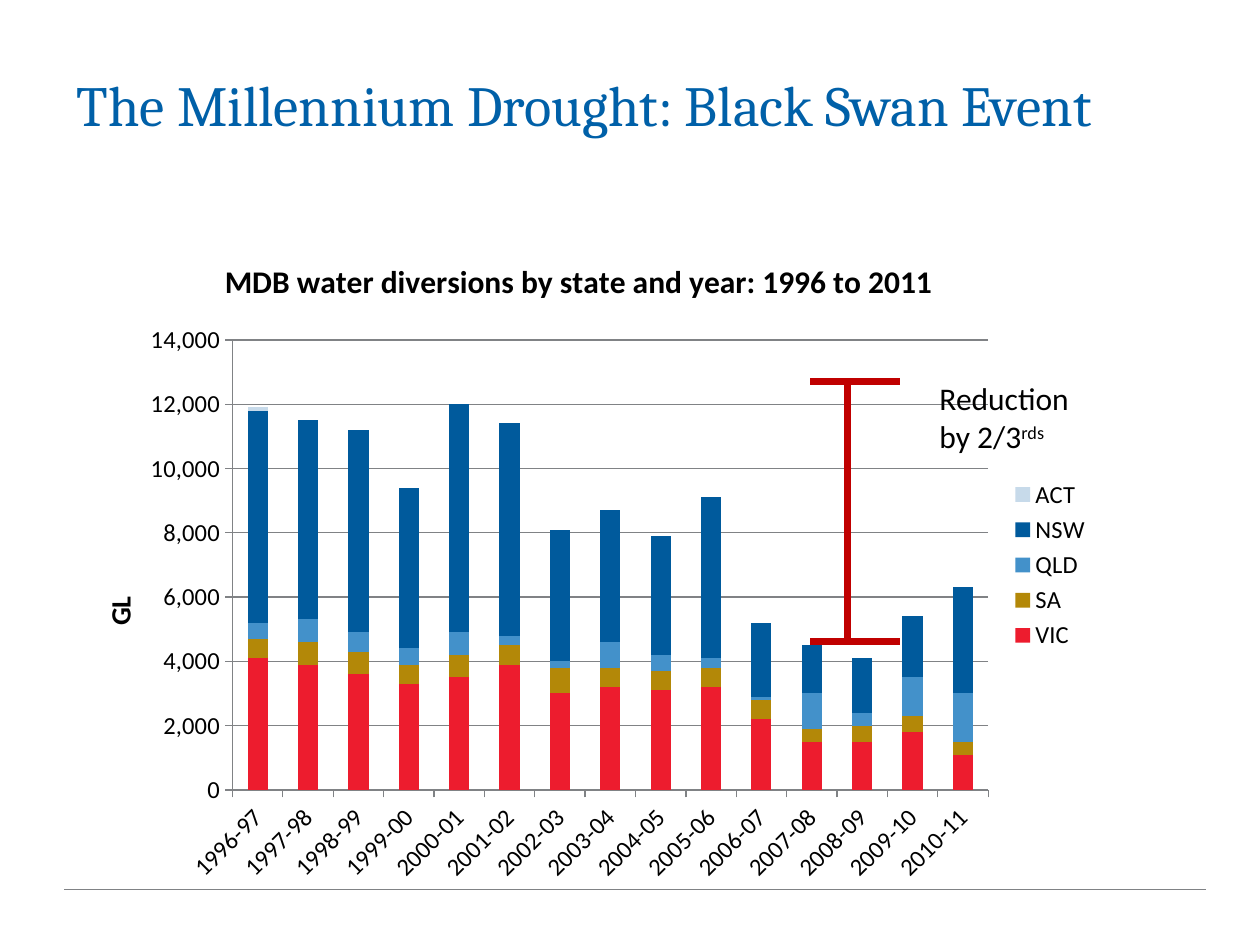
from lxml.etree import SubElement
from pptx import Presentation
from pptx.chart.data import CategoryChartData
from pptx.dml.color import RGBColor
from pptx.enum.chart import XL_CHART_TYPE, XL_LEGEND_POSITION, XL_TICK_MARK
from pptx.enum.shapes import MSO_CONNECTOR
from pptx.enum.text import MSO_ANCHOR, MSO_AUTO_SIZE
from pptx.oxml import parse_xml
from pptx.oxml.ns import nsdecls, qn
from pptx.util import Cm, Pt

BLACK = RGBColor(0x00, 0x00, 0x00)
BLUE = RGBColor(0x00, 0x60, 0xA8)
RED = RGBColor(0xC0, 0x00, 0x00)
GREY = RGBColor(0x80, 0x82, 0x85)
STATES = [
    ("VIC", RGBColor(0xED, 0x1C, 0x2E),
     [4100, 3900, 3600, 3300, 3500, 3900, 3000, 3200, 3100, 3200, 2200, 1500, 1500, 1800, 1100]),
    ("SA", RGBColor(0xB3, 0x88, 0x08),
     [600, 700, 700, 600, 700, 600, 800, 600, 600, 600, 600, 400, 500, 500, 400]),
    ("QLD", RGBColor(0x43, 0x91, 0xCA),
     [500, 700, 600, 500, 700, 300, 200, 800, 500, 300, 100, 1100, 400, 1200, 1500]),
    ("NSW", RGBColor(0x00, 0x5A, 0x9C),
     [6600, 6200, 6300, 5000, 7100, 6600, 4100, 4100, 3700, 5000, 2300, 1500, 1700, 1900, 3300]),
    ("ACT", RGBColor(0xC7, 0xDA, 0xEA), [100] + [0] * 14),
]


def add_run(para, text, size, color=BLACK, face="Calibri", bold=False):
    run = para.add_run()
    run.text = text
    font = run.font
    font.size, font.name, font.bold = Pt(size), face, bold
    font.color.rgb = color
    return run


def set_place(node, index, **parts):
    for old in node.findall(qn("c:layout")):
        node.remove(old)
    body = "".join(f'<c:{key} val="{val}"/>' for key, val in parts.items())
    node.insert(index, parse_xml(
        f'<c:layout {nsdecls("c")}><c:manualLayout>{body}</c:manualLayout></c:layout>'))


deck = Presentation()
deck.slide_width, deck.slide_height = Cm(25.4), Cm(19.05)
slide = deck.slides.add_slide(deck.slide_layouts[6])
shapes = slide.shapes

head = shapes.add_textbox(Cm(1.3), Cm(0.91), Cm(22.86), Cm(2.36)).text_frame
head.word_wrap = True
head.vertical_anchor = MSO_ANCHOR.MIDDLE
add_run(head.paragraphs[0], "The Millennium Drought: Black Swan Event", 32.4, BLUE, "Cambria")

data = CategoryChartData(number_format="#,##0")
data.categories = [f"{year}-{(year + 1) % 100:02}" for year in range(1996, 2011)]
for name, color, vals in STATES:
    data.add_series(name, vals)
chart = shapes.add_chart(XL_CHART_TYPE.COLUMN_STACKED, Cm(1.09), Cm(4.72),
                         Cm(21.16), Cm(13.34), data).chart
chart.font.size, chart.font.name = Pt(10), "Calibri"
chart.font.color.rgb = BLACK
chart.has_title = True
add_run(chart.chart_title.text_frame.paragraphs[0],
        "MDB water diversions by state and year: 1996 to 2011", 18, bold=True)
chart.has_legend = True
chart.legend.position = XL_LEGEND_POSITION.RIGHT
chart.legend.include_in_layout = False
chart.legend.font.size = Pt(14)

plot = chart.plots[0]
plot.gap_width, plot.overlap = 150, 100
plot.vary_by_categories = False
for row, (name, color, vals) in zip(plot.series, STATES):
    row.format.fill.solid()
    row.format.fill.fore_color.rgb = color

cats, vals = chart.category_axis, chart.value_axis
for axis in (cats, vals):
    axis.major_tick_mark = XL_TICK_MARK.OUTSIDE
    axis.minor_tick_mark = XL_TICK_MARK.NONE
    axis.tick_labels.font.size = Pt(14)
    axis.format.line.color.rgb = GREY
    axis.format.line.width = Pt(0.75)
cats.tick_labels.font._element.getroottree()
cats._element.find(qn("c:txPr")).find(qn("a:bodyPr")).set("rot", "-2700000")
vals.minimum_scale, vals.maximum_scale, vals.major_unit = 0, 14000, 2000
vals.tick_labels.number_format = "#,##0"
vals.tick_labels.number_format_is_linked = False
vals.has_major_gridlines = True
vals.major_gridlines.format.line.color.rgb = GREY
vals.major_gridlines.format.line.width = Pt(0.75)
label = vals.axis_title.text_frame
add_run(label.paragraphs[0], "GL", 16, bold=True)
turn = label._txBody.find(qn("a:bodyPr"))
turn.set("rot", "-5400000")
turn.set("vert", "horz")
set_place(vals.axis_title._element, 1, xMode="edge", yMode="edge", x=0.04, y=0.54)
set_place(chart._chartSpace.chart.plotArea, 0, layoutTarget="inner", xMode="edge",
          yMode="edge", x=0.17, y=0.16, w=0.72, h=0.68)

for left, top, right, low, color, width in [
    (1.3, 17.93, 24.31, 17.93, GREY, 0.75),
    (16.33, 7.7, 18.14, 7.7, RED, 4),
    (17.09, 7.72, 17.09, 12.93, RED, 4),
    (16.33, 12.93, 18.14, 12.93, RED, 4),
]:
    line = shapes.add_connector(MSO_CONNECTOR.STRAIGHT, Cm(left), Cm(top), Cm(right), Cm(low))
    line.line.color.rgb = color
    line.line.width = Pt(width)
    SubElement(line._element.spPr, qn("a:effectLst"))

note = shapes.add_textbox(Cm(18.69), Cm(7.52), Cm(3.81), Cm(1.8)).text_frame
note.word_wrap = True
note.auto_size = MSO_AUTO_SIZE.SHAPE_TO_FIT_TEXT
add_run(note.paragraphs[0], "Reduction by 2/3", 18)
power = add_run(note.paragraphs[0], "rds", 18)
power._r.get_or_add_rPr().set("baseline", "30000")

deck.save("out.pptx")
